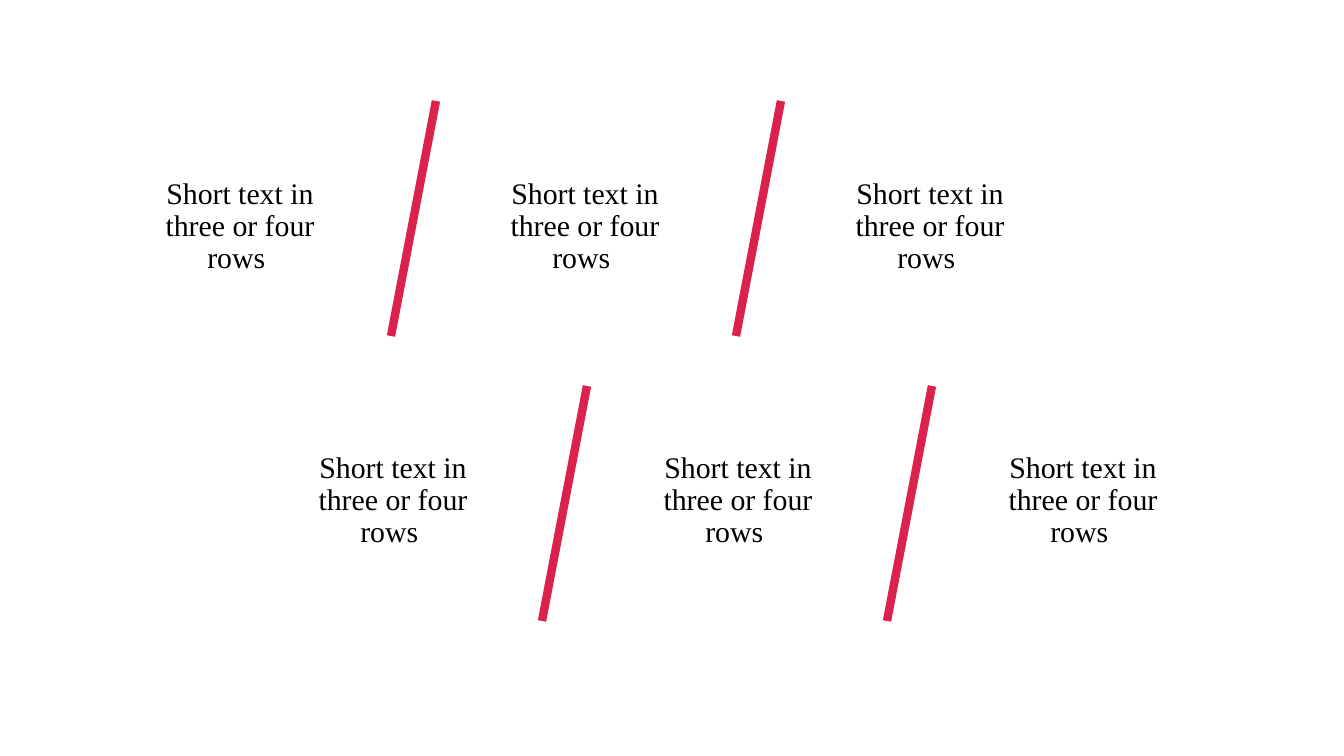
"""Build a slide with two staggered rows of short texts parted by slanted lines."""
import dataclasses

import lxml.etree
import pptx
import pptx.dml.color
import pptx.enum.shapes
import pptx.enum.text
import pptx.oxml.ns
import pptx.util

EMU_PER_PX = 914400 / 134.4
PITCH = 345
COLUMNS = 3
TEXT = "Short text in three or four rows "


@dataclasses.dataclass(frozen=True)
class Theme:
    font: str = "Times New Roman"
    text_size: float = 16
    text_color: str = "000000"
    line_color: str = "DB224C"
    line_width: float = 4.5
    line_spacing: float = 0.9


@dataclasses.dataclass(frozen=True)
class Row:
    text_left: int
    text_top: int
    line_left: int
    line_top: int


THEME = Theme()
ROWS = (Row(125, 153, 391, 101), Row(278, 427, 542, 386))


def px(length):
    return pptx.util.Emu(round(length * EMU_PER_PX))


def rgb(value):
    return pptx.dml.color.RGBColor.from_string(value)


def add_text(slide, left, top):
    box = slide.shapes.add_textbox(px(left), px(top), px(230), px(148))
    frame = box.text_frame
    frame.word_wrap = True
    frame.vertical_anchor = pptx.enum.text.MSO_ANCHOR.MIDDLE
    para = frame.paragraphs[0]
    para.alignment = pptx.enum.text.PP_ALIGN.CENTER
    para.line_spacing = THEME.line_spacing
    span = para.add_run()
    span.text = TEXT
    span.font.name = THEME.font
    span.font.size = pptx.util.Pt(THEME.text_size)
    span.font.color.rgb = rgb(THEME.text_color)


def add_divider(slide, left, top):
    line = slide.shapes.add_connector(
        pptx.enum.shapes.MSO_CONNECTOR.STRAIGHT,
        px(left), px(top + 235), px(left + 45), px(top))
    line.line.color.rgb = rgb(THEME.line_color)
    line.line.width = pptx.util.Pt(THEME.line_width)
    properties = line._element.spPr
    lxml.etree.SubElement(properties, pptx.oxml.ns.qn("a:effectLst"))


def main():
    deck = pptx.Presentation()
    deck.slide_width, deck.slide_height = px(1344), px(756)
    slide = deck.slides.add_slide(deck.slide_layouts.get_by_name("Blank"))
    for row in ROWS:
        for column in range(COLUMNS):
            add_text(slide, row.text_left + column * PITCH, row.text_top)
    for row in ROWS:
        for gap in range(COLUMNS - 1):
            add_divider(slide, row.line_left + gap * PITCH, row.line_top)
    deck.save("out.pptx")


if __name__ == "__main__":
    main()
